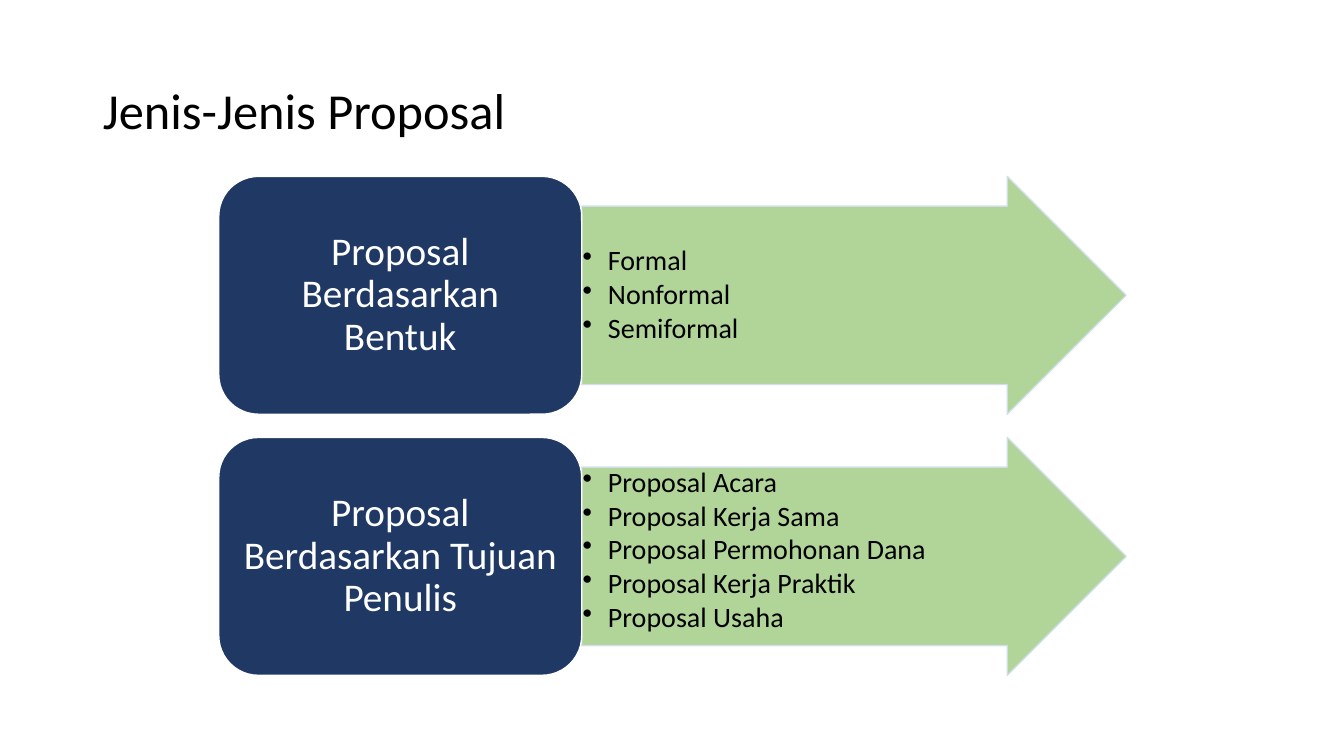
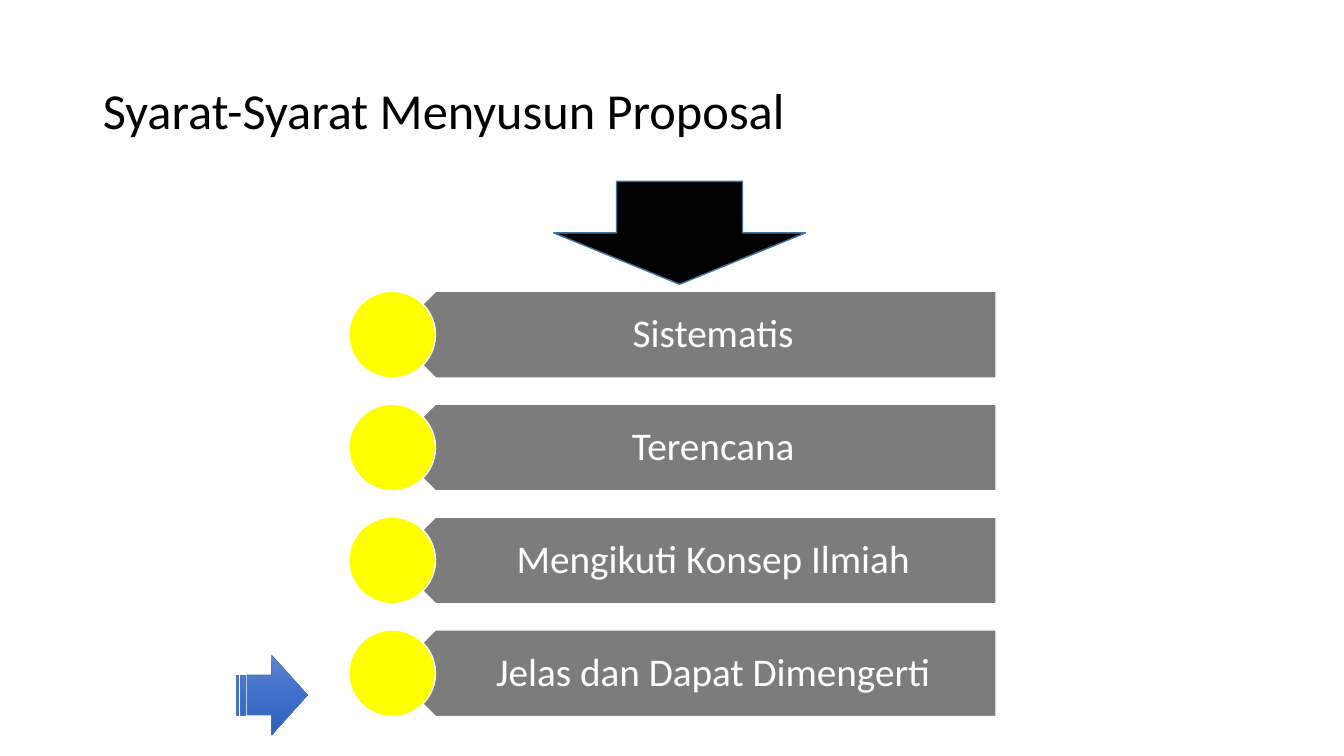
"""Builds two slides on the kinds of proposal and the rules for writing one."""
from copy import deepcopy

from lxml import etree
from pptx import Presentation
from pptx.dml.color import RGBColor
from pptx.enum.shapes import MSO_SHAPE
from pptx.enum.text import MSO_ANCHOR, PP_ALIGN
from pptx.oxml.ns import qn
from pptx.util import Inches, Pt

TOP, MIDDLE = MSO_ANCHOR.TOP, MSO_ANCHOR.MIDDLE
LEFT, CENTER = PP_ALIGN.LEFT, PP_ALIGN.CENTER
FONT = "Calibri"
COLORS = {
    "ink": "000000", "paper": "FFFFFF", "navy": "203864", "green": "A9D18E",
    "pale": "D2DEEF", "gray": "7C7C7C", "yellow": "FFFF00",
    "steel": "43739E", "blue": "4472C4",
}
STRIPED_STOPS = [(0, "6183CB"), (0.5, "3E70CA"), (1, "3062BB")]

KINDS_TITLE = "Jenis-Jenis Proposal"
KINDS = [
    ("Proposal Berdasarkan Bentuk", MIDDLE,
     ["Formal", "Nonformal", "Semiformal"]),
    ("Proposal Berdasarkan Tujuan Penulis", TOP,
     ["Proposal Acara", "Proposal Kerja Sama", "Proposal Permohonan Dana",
      "Proposal Kerja Praktik", "Proposal Usaha"]),
]
RULES_TITLE = "Syarat-Syarat Menyusun Proposal"
RULES = ["Sistematis", "Terencana", "Mengikuti Konsep Ilmiah",
         "Jelas dan Dapat Dimengerti"]

KIND_LEFT, KIND_TOP, KIND_HEIGHT, KIND_STEP = 2.17, 1.75, 2.36, 2.59
LABEL_WIDTH, ARROW_WIDTH = 3.6, 5.4
RULE_LEFT, RULE_TOP, RULE_HEIGHT, RULE_STEP = 3.46, 2.89, 0.86, 1.12
RULE_WIDTH = 5.99


def rgb(name):
    return RGBColor.from_string(COLORS[name])


def add_titled_slide(deck, title):
    slide = deck.slides.add_slide(deck.slide_layouts[5])
    heading = slide.shapes.title
    heading.left, heading.top = Inches(0.92), Inches(0.4)
    heading.width, heading.height = Inches(11.5), Inches(1.45)
    write(heading, [title], 36, "ink", LEFT)
    return slide


def add_block(slide, kind, box, fill, line):
    block = slide.shapes.add_shape(kind, *(Inches(side) for side in box))
    block.shadow.inherit = False
    block.fill.solid()
    block.fill.fore_color.rgb = rgb(fill)
    block.line.color.rgb = rgb(line)
    block.line.width = Pt(1)
    return block


def write(block, lines, size, color, align, insets=None, anchor=MIDDLE,
          after=0, bullets=False):
    frame = block.text_frame
    frame.word_wrap = True
    frame.vertical_anchor = anchor
    if insets:
        (frame.margin_left, frame.margin_top, frame.margin_right,
         frame.margin_bottom) = (Inches(inset) for inset in insets)
    frame.text = "\n".join(lines)
    for paragraph in frame.paragraphs:
        if bullets:
            properties = paragraph._p.get_or_add_pPr()
            properties.set("marL", str(Inches(0.25)))
            properties.set("indent", str(-Inches(0.25)))
            etree.SubElement(properties, qn("a:buChar")).set("char", "•")
        paragraph.alignment = align
        paragraph.line_spacing = 0.9
        paragraph.space_after = Pt(after)
        paragraph.font.name = FONT
        paragraph.font.size = Pt(size)
        paragraph.font.color.rgb = rgb(color)


def make_translucent(block, share):
    for color in block._element.spPr.iter(qn("a:srgbClr")):
        etree.SubElement(color, qn("a:alpha")).set("val", str(int(share * 100000)))


def fill_gradient(block, stops):
    block.fill.gradient()
    block.fill.gradient_angle = 270
    stop_list = block._element.spPr.find(".//" + qn("a:gsLst"))
    stop_list.insert(1, deepcopy(stop_list[0]))
    for stop, (position, color) in zip(block.fill.gradient_stops, stops):
        stop.position = position
        stop.color.rgb = RGBColor.from_string(color)


def build_kinds(deck):
    slide = add_titled_slide(deck, KINDS_TITLE)
    for row, (label, anchor, examples) in enumerate(KINDS):
        top = KIND_TOP + row * KIND_STEP
        arrow = add_block(
            slide, MSO_SHAPE.RIGHT_ARROW,
            (KIND_LEFT + LABEL_WIDTH, top, ARROW_WIDTH, KIND_HEIGHT),
            "green", "pale")
        arrow.adjustments[0] = 0.75
        make_translucent(arrow, 0.9)
        write(arrow, examples, 20, "ink", LEFT, (0.01,) * 4, anchor, 2.5, True)
        card = add_block(slide, MSO_SHAPE.ROUNDED_RECTANGLE,
                         (KIND_LEFT, top, LABEL_WIDTH, KIND_HEIGHT),
                         "navy", "paper")
        write(card, [label], 28, "paper", CENTER, (0.12, 0.06, 0.12, 0.06))


def build_rules(deck):
    slide = add_titled_slide(deck, RULES_TITLE)
    for row, rule in enumerate(RULES):
        top = RULE_TOP + row * RULE_STEP
        banner = add_block(
            slide, MSO_SHAPE.PENTAGON,
            (RULE_LEFT + RULE_HEIGHT / 2, top, RULE_WIDTH, RULE_HEIGHT),
            "gray", "paper")
        banner._element.spPr.find(qn("a:xfrm")).set("flipH", "1")
        write(banner, [rule], 28, "paper", CENTER, (0.38, 0.12, 0.22, 0.12))
        add_block(slide, MSO_SHAPE.OVAL,
                  (RULE_LEFT, top, RULE_HEIGHT, RULE_HEIGHT),
                  "yellow", "paper")
    add_block(slide, MSO_SHAPE.DOWN_ARROW, (5.49, 1.8, 2.5, 1.02),
              "ink", "steel")
    pointer = add_block(slide, MSO_SHAPE.STRIPED_RIGHT_ARROW,
                        (2.34, 6.5, 0.71, 0.79), "blue", "blue")
    pointer.line.width = Pt(0.5)
    fill_gradient(pointer, STRIPED_STOPS)


def main():
    deck = Presentation()
    deck.slide_width, deck.slide_height = Inches(13.33), Inches(7.5)
    build_kinds(deck)
    build_rules(deck)
    deck.save("out.pptx")


if __name__ == "__main__":
    main()
